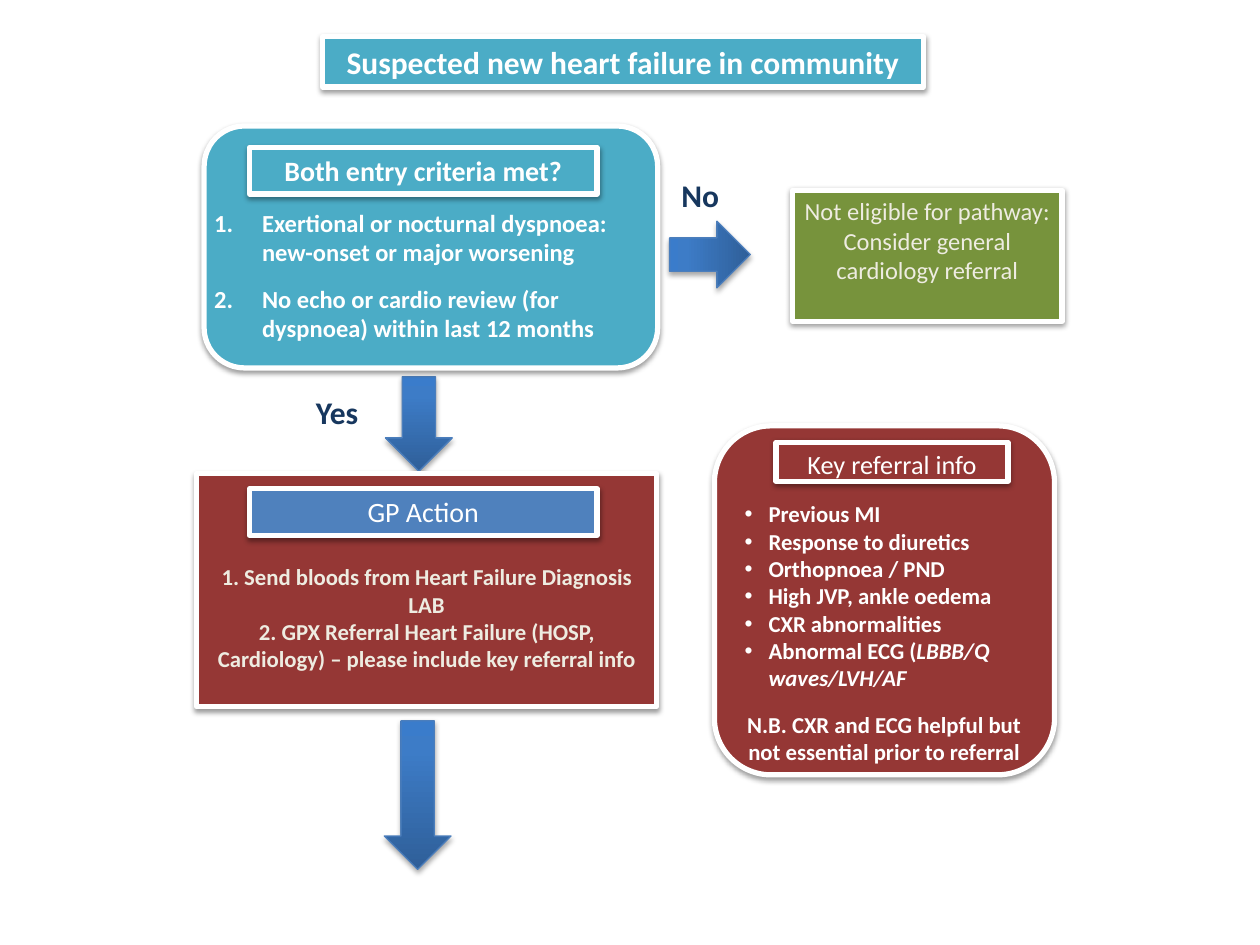
from copy import deepcopy
from dataclasses import dataclass
from typing import Optional

from lxml import etree
from pptx import Presentation
from pptx.dml.color import RGBColor
from pptx.enum.shapes import MSO_SHAPE
from pptx.enum.text import MSO_ANCHOR, MSO_AUTO_SIZE, PP_ALIGN
from pptx.oxml.ns import qn
from pptx.util import Inches, Pt

RECT, ROUND, DOWN = MSO_SHAPE.RECTANGLE, MSO_SHAPE.ROUNDED_RECTANGLE, MSO_SHAPE.DOWN_ARROW
CENTER, LEFT = PP_ALIGN.CENTER, PP_ALIGN.LEFT
TOP, NO_FIT = MSO_ANCHOR.TOP, MSO_AUTO_SIZE.NONE

FONT = "Calibri"
WHITE = RGBColor(0xFF, 0xFF, 0xFF)
CREAM = RGBColor(0xEE, 0xEC, 0xE1)
NAVY = RGBColor(0x17, 0x37, 0x5E)
TEAL = RGBColor(0x4B, 0xAC, 0xC6)
RED = RGBColor(0x95, 0x37, 0x35)
GREEN = RGBColor(0x77, 0x93, 0x3C)
BLUE = RGBColor(0x4F, 0x81, 0xBD)
ARROW_LINE = RGBColor(0x4B, 0x7E, 0xBC)
ARROW_STOPS = (
    (0, RGBColor(0x2F, 0x5F, 0x99)),
    (0.8, RGBColor(0x3D, 0x7C, 0xC7)),
    (1, RGBColor(0x3A, 0x7C, 0xCB)),
)


@dataclass
class Box:
    at: tuple
    fill: RGBColor
    lines: tuple = ()
    size: int = 16
    color: RGBColor = WHITE
    bold: bool = False
    kind: int = RECT
    margin_top: float = 0.05
    margin_side: float = 0.1


@dataclass
class Arrow:
    at: tuple
    rotation: int = 0


@dataclass
class Label:
    at: tuple
    text: str


def place(sp, at: tuple) -> None:
    sp.left, sp.top, sp.width, sp.height = map(Inches, at)


def add_run(p, text: str, size: int, color: RGBColor, bold=False, italic=False) -> None:
    r = p.add_run()
    r.text = text
    f = r.font
    f.name, f.size, f.bold, f.italic = FONT, Pt(size), bold, italic
    f.color.rgb = color


def next_paragraph(tf, first: bool, align=LEFT):
    p = tf.paragraphs[0] if first else tf.add_paragraph()
    p.alignment = align
    p.space_before = Pt(0)
    return p


def setup_frame(sp, margin_top: float = 0.05, margin_side: float = 0.1):
    tf = sp.text_frame
    tf.word_wrap, tf.auto_size, tf.vertical_anchor = True, NO_FIT, TOP
    tf.margin_top = Inches(margin_top)
    tf.margin_left = tf.margin_right = Inches(margin_side)
    return tf


def add_shadow(sp, alpha: int, distance: float) -> None:
    sp.shadow.inherit = False
    effects = sp.element.spPr.find(qn("a:effectLst"))
    shadow = etree.SubElement(effects, qn("a:outerShdw"), blurRad=str(Pt(3.1)),
                              dist=str(Pt(distance)), dir="5400000", rotWithShape="0")
    color = etree.SubElement(shadow, qn("a:srgbClr"), val="000000")
    etree.SubElement(color, qn("a:alpha"), val=str(alpha * 1000))


def style_box(sp, box: Box) -> None:
    sp.fill.solid()
    sp.fill.fore_color.rgb = box.fill
    sp.line.color.rgb = WHITE
    sp.line.width = Pt(3)
    add_shadow(sp, 38, 1.6)
    tf = setup_frame(sp, box.margin_top, box.margin_side)
    for i, line in enumerate(box.lines):
        add_run(next_paragraph(tf, i == 0, CENTER), line, box.size, box.color, box.bold)


def add_box(s, box: Box) -> None:
    style_box(s.shapes.add_shape(box.kind, *map(Inches, box.at)), box)


def add_arrow(s, arrow: Arrow) -> None:
    sp = s.shapes.add_shape(DOWN, *map(Inches, arrow.at))
    sp.rotation = arrow.rotation
    sp.fill.gradient()
    sp.fill.gradient_angle = 90
    # The default gradient has two stops; a third is needed
    stops = sp.element.spPr.find(qn("a:gradFill")).find(qn("a:gsLst"))
    stops.append(deepcopy(stops[-1]))
    for stop, (position, color) in zip(sp.fill.gradient_stops, ARROW_STOPS):
        stop.position = position
        stop.color.rgb = color
    sp.line.color.rgb = ARROW_LINE
    sp.line.width = Pt(0.75)
    add_shadow(sp, 35, 1.8)


def add_label(s, label: Label) -> None:
    tf = setup_frame(s.shapes.add_textbox(*map(Inches, label.at)))
    p = next_paragraph(tf, True)
    p.line_spacing = 0.8
    add_run(p, label.text, 18, NAVY, bold=True)


def set_bullet(p, margin: float, indent: float, tag: str, **attrs: str) -> None:
    pPr = p._p.get_or_add_pPr()
    pPr.set("marL", str(Inches(margin)))
    pPr.set("indent", str(Inches(indent)))
    etree.SubElement(pPr, qn(tag), **attrs)


def fill_list(sp, at: tuple, items: tuple, size: int, margin: float, indent: float,
              gap: float, tag: str, note: Optional[str] = None, **attrs: str) -> None:
    place(sp, at)
    sp.element.getparent().append(sp.element)  # bring in front of its panel
    tf = setup_frame(sp)
    for i, (text, italic_text) in enumerate(items):
        p = next_paragraph(tf, i == 0)
        p.space_after = Pt(gap)
        set_bullet(p, margin, indent, tag, **attrs)
        add_run(p, text, size, WHITE, bold=True)
        if italic_text:
            add_run(p, italic_text, size, WHITE, bold=True, italic=True)
    if note:
        p = next_paragraph(tf, False, CENTER)
        p.space_before = Pt(11)
        set_bullet(p, 0.12, 0, "a:buNone")
        add_run(p, note, size, WHITE, bold=True)


TITLE = Box((2.56, 0.29, 4.77, 0.4), TEAL, ("Suspected new heart failure in community",), 18, bold=True)
BOXES = (
    # Entry criteria
    Box((1.62, 1, 3.6, 1.92), TEAL, kind=ROUND),
    Box((1.98, 1.17, 2.76, 0.37), TEAL, ("Both entry criteria met?",), bold=True),
    # Not eligible
    Box((6.29, 1.51, 2.14, 1.04), GREEN,
        ("Not eligible for pathway:", "Consider general cardiology referral"), 14, CREAM,
        margin_side=0.08),
    # GP action
    Box((1.56, 3.76, 3.65, 1.85), RED,
        ("1. Send bloods from Heart Failure Diagnosis LAB",
         "2. GPX Referral Heart Failure (HOSP, Cardiology) – please include key referral info"),
        13, CREAM, True, margin_top=0.71, margin_side=0.08),
    Box((1.98, 3.88, 2.76, 0.37), BLUE, ("GP Action",)),
    # Key referral info
    Box((5.67, 3.38, 2.7, 2.77), RED, kind=ROUND),
    Box((6.16, 3.51, 1.84, 0.31), RED, ("Key referral info",), 15),
)
ARROWS = (
    Arrow((3.06, 2.99, 0.53, 0.75)),
    Arrow((5.37, 1.7, 0.53, 0.64), 270),
    Arrow((3.05, 5.72, 0.53, 1.18)),
)
LABELS = (Label((2.41, 3.13, 0.6, 0.34), "Yes"), Label((5.31, 1.41, 0.5, 0.34), "No"))
CRITERIA = (
    ("Exertional or nocturnal dyspnoea: new-onset or major worsening", ""),
    ("No echo or cardio review (for dyspnoea) within last 12 months", ""),
)
REFERRAL_INFO = (
    ("Previous MI", ""),
    ("Response to diuretics", ""),
    ("Orthopnoea / PND", ""),
    ("High JVP, ankle oedema", ""),
    ("CXR abnormalities", ""),
    ("Abnormal ECG (", "LBBB/Q waves/LVH/AF"),
)


def main() -> None:
    prs = Presentation()
    prs.slide_width, prs.slide_height = Inches(10), Inches(7.5)
    s = prs.slides.add_slide(prs.slide_layouts[3])
    title, criteria, referral = s.placeholders

    place(title, TITLE.at)
    style_box(title, TITLE)
    for arrow in ARROWS:
        add_arrow(s, arrow)
    for box in BOXES:
        add_box(s, box)
    for label in LABELS:
        add_label(s, label)

    # Lists on top of their panels
    fill_list(criteria, (1.6, 1.6, 3.5, 1.18), CRITERIA, 14, 0.38, -0.38, 9.6,
              "a:buAutoNum", type="arabicPeriod")
    fill_list(referral, (5.69, 3.92, 2.53, 2.24), REFERRAL_INFO, 13, 0.31, -0.19, 0, "a:buChar",
              note="N.B. CXR and ECG helpful but not essential prior to referral", char="•")
    prs.save("out.pptx")


if __name__ == "__main__":
    main()
